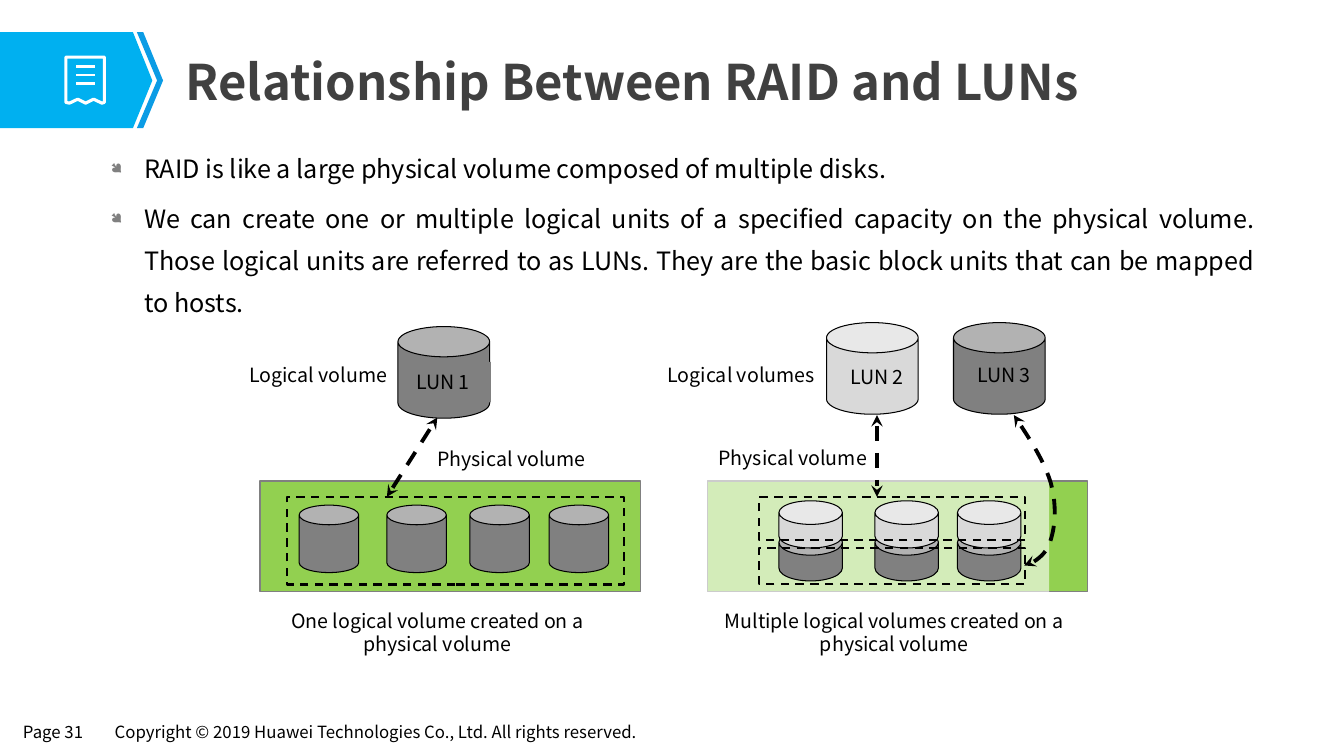
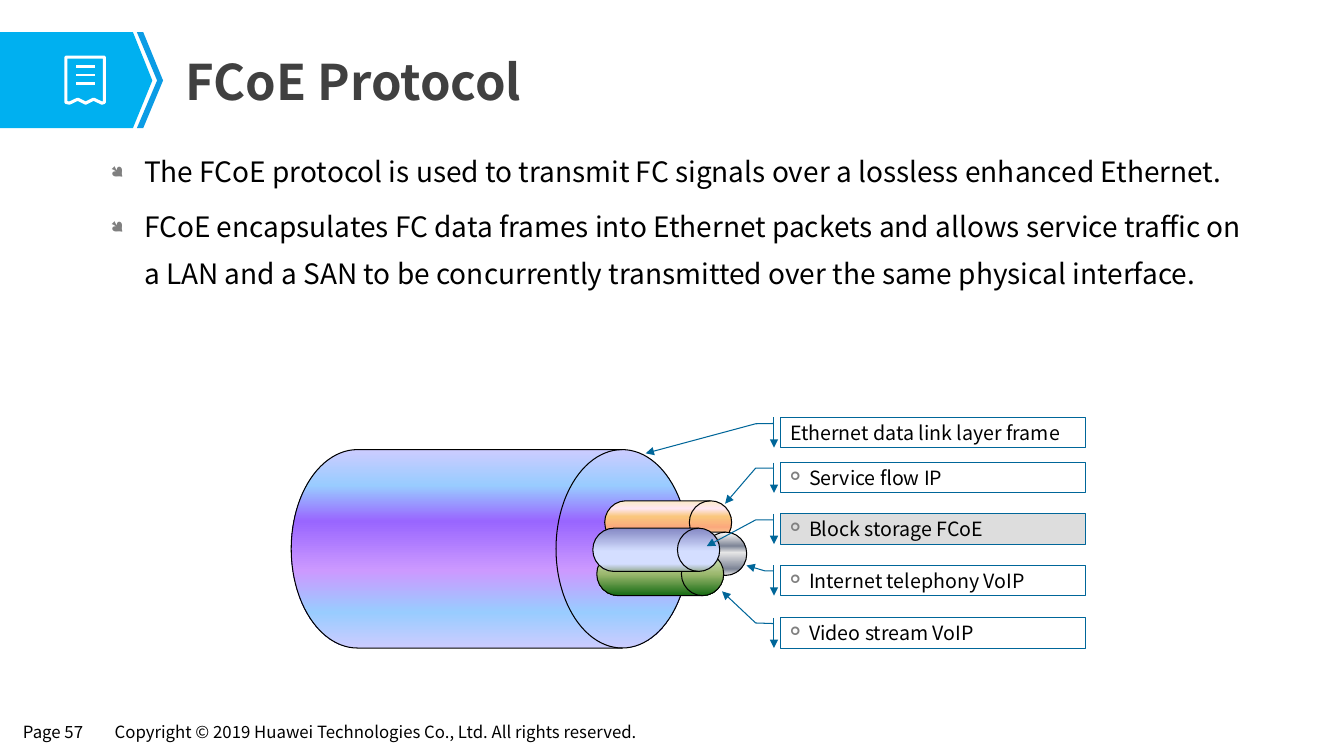
from lxml import etree
from pptx import Presentation
from pptx.dml.color import RGBColor
from pptx.enum.dml import MSO_LINE
from pptx.enum.shapes import MSO_CONNECTOR, MSO_SHAPE
from pptx.enum.text import MSO_ANCHOR, MSO_AUTO_SIZE, PP_ALIGN
from pptx.oxml.ns import qn
from pptx.util import Cm, Pt

RECTANGLE, CAN = MSO_SHAPE.RECTANGLE, MSO_SHAPE.CAN
DRUM = MSO_SHAPE.FLOWCHART_DIRECT_ACCESS_STORAGE
CALLOUT = MSO_SHAPE.LINE_CALLOUT_2_BORDER_AND_ACCENT_BAR
STRAIGHT = MSO_CONNECTOR.STRAIGHT
DASH = MSO_LINE.DASH
TOP, MIDDLE = MSO_ANCHOR.TOP, MSO_ANCHOR.MIDDLE
LEFT, CENTER, JUSTIFY = PP_ALIGN.LEFT, PP_ALIGN.CENTER, PP_ALIGN.JUSTIFY
NO_AUTOFIT = MSO_AUTO_SIZE.NONE

FONT = "Noto Sans CJK SC"
BLACK = RGBColor(0x00, 0x00, 0x00)
WHITE = RGBColor(0xFF, 0xFF, 0xFF)
TITLE_GRAY = RGBColor(0x40, 0x40, 0x40)
GRAY = RGBColor(0x80, 0x80, 0x80)
LIGHT_GRAY = RGBColor(0xD9, 0xD9, 0xD9)
HIGHLIGHT = RGBColor(0xDD, 0xDD, 0xDD)
GREEN = RGBColor(0x92, 0xD0, 0x50)
SKY = RGBColor(0x00, 0xB0, 0xF0)
BLUE = RGBColor(0x0B, 0x9C, 0xE5)
TEAL = RGBColor(0x00, 0x66, 0x99)

# All positions and sizes are in centimetres.
COPYRIGHT = "Copyright © 2019 Huawei Technologies Co., Ltd. All rights reserved."
BANNER = [(3.35, 3.23), (0, 3.23), (0, 0.81), (3.35, 0.81), (3.84, 2.03)]
CHEVRON = [(3.61, 0.81), (3.45, 0.81), (3.96, 2.03), (3.45, 3.23),
           (3.61, 3.23), (4.11, 2.03)]
RECEIPT = [(1.66, 1.44), (2.63, 1.44), (2.63, 2.58), (2.57, 2.6), (2.36, 2.5),
           (2.16, 2.6), (1.96, 2.5), (1.75, 2.6), (1.66, 2.58)]

RAID_TITLE = "Relationship Between RAID and LUNs"
RAID_POINTS = [
    "RAID is like a large physical volume composed of multiple disks.",
    "We can create one or multiple logical units of a specified capacity on the "
    "physical volume. Those logical units are referred to as LUNs. They are the "
    "basic block units that can be mapped to hosts.",
]
RAID_LABELS = [  # text, box, wraps
    ("Physical volume", (10.72, 11.13, 4.34, 0.86), False),
    ("Physical volume", (17.81, 11.1, 4.34, 0.86), False),
    ("Logical volume", (5.97, 9.02, 4.11, 0.86), False),
    ("Logical volumes", (16.51, 9.02, 4.34, 0.86), False),
    ("One logical volume created on a physical volume", (6.15, 15.21, 9.75, 1.45), True),
    ("Multiple logical volumes created on a physical volume",
     (17.53, 15.21, 10.01, 1.45), True),
]
LUNS = [  # name, can position, can colour, label box, label fill, alignment
    ("LUN 1", (10.03, 8.23), GRAY, (10.24, 9.12, 2.13, 1.02), GRAY, LEFT),
    ("LUN 2", (20.83, 8.13), LIGHT_GRAY, (21.11, 9.07, 1.98, 0.86), None, CENTER),
    ("LUN 3", (24.03, 8.13), GRAY, (24.31, 9.02, 1.98, 0.86), None, CENTER),
]
DISK_LEFTS = [7.54, 9.75, 11.84, 13.84]
SPLIT_DISK_LEFTS = [19.63, 22.05, 24.13]
DISK_GROUPS = [(19.13, 12.52, 6.71, 1.09), (19.13, 13.82, 6.71, 0.89),
               (7.24, 12.52, 8.48, 2.21)]
VOLUME_ARROWS = [((9.75, 12.52), (11.02, 10.52)), ((22.1, 10.46), (22.1, 12.52))]
CURVE = [  # cubic segments, each starting where the one before ends
    [(25.81, 14.25), (25.93, 14.25), (26.31, 14.05), (26.44, 13.72)],
    [(26.44, 13.72), (26.57, 13.39), (26.64, 12.9), (26.52, 12.32)],
    [(26.52, 12.32), (26.39, 11.73), (25.98, 11.1), (25.55, 10.46)],
]

FCOE_TITLE = "FCoE Protocol"
FCOE_POINTS = [
    "The FCoE protocol is used to transmit FC signals over a lossless enhanced Ethernet.",
    "FCoE encapsulates FC data frames into Ethernet packets and allows service "
    "traffic on a LAN and a SAN to be concurrently transmitted over the same "
    "physical interface.",
]
STREAM_SIZE = (3.2, 1.09)
DRUMS = [  # box, gradient stops
    ((7.34, 11.33, 10.01, 5),
     [(0, "CCCCFF"), (18, "99CCFF"), (36, "9966FF"), (61, "CC99FF"),
      (82, "99CCFF"), (100, "CCCCFF")]),
    ((15.24, 12.62, *STREAM_SIZE),
     [(0, "FBEAC7"), (18, "FEE7F2"), (36, "FAC77D"), (61, "FBA97D"),
      (82, "FBD49C"), (100, "FEE7F2")]),
    ((15.62, 13.41, *STREAM_SIZE),
     [(0, "FFFFFF"), (7, "E6E6E6"), (32, "7D8496"), (47, "E6E6E6"),
      (85, "7D8496"), (100, "E6E6E6")]),
    ((15.04, 13.92, *STREAM_SIZE), [(0, "DDEBCF"), (50, "9CB86E"), (100, "156B13")]),
    ((14.94, 13.31, *STREAM_SIZE),
     [(0, "8488C4"), (53, "D4DEFF"), (83, "D4DEFF"), (100, "96AB94")]),
]
CALLOUTS = [  # text, top, fill, bullet, pointer adjustments
    ("Ethernet data link layer frame", 10.52, WHITE, None,
     (0.2, -0.02, 0.21, -0.08, 1.19, -0.44)),
    ("Service flow IP", 11.66, WHITE, "➢", (0.18, -0.02, 0.18, -0.08, 1.36, -0.18)),
    ("Block storage FCoE", 12.95, HIGHLIGHT, "➢", (0.2, -0.02, 0.2, -0.08, 1.07, -0.24)),
    ("Internet telephony VoIP", 14.25, WHITE, "➢", (0.18, -0.02, 0.18, -0.05, 0, -0.11)),
    ("Video stream VoIP", 15.57, WHITE, "➢", (0.19, -0.02, 0.17, -0.08, -0.88, -0.19)),
]


def add_child(parent, tag, **attributes):
    child = etree.SubElement(parent, qn(tag))
    for name, value in attributes.items():
        child.set(name, str(value))
    return child


def add_bullet(paragraph, symbol, indent):
    properties = paragraph._p.get_or_add_pPr()
    properties.set("marL", str(Cm(indent)))
    properties.set("indent", str(-Cm(indent)))
    add_child(add_child(properties, "a:buClr"), "a:srgbClr", val=GRAY)
    add_child(properties, "a:buSzPct", val=60000)
    add_child(properties, "a:buFont", typeface="Wingdings")
    add_child(properties, "a:buChar", char=symbol)


def write_text(shape, *texts, size=14, color=BLACK, bold=False, align=LEFT,
               anchor=TOP, wrap=True, bullet=None, indent=0, spacing=None, gap=0):
    """Fill a shape with one paragraph per text, all in the same format."""
    frame = shape.text_frame
    frame.auto_size = NO_AUTOFIT
    frame.word_wrap = wrap
    frame.vertical_anchor = anchor
    for index, text in enumerate(texts):
        paragraph = frame.add_paragraph() if index else frame.paragraphs[0]
        if bullet:
            add_bullet(paragraph, bullet, indent)
        paragraph.alignment = align
        if spacing:
            paragraph.line_spacing = spacing
        if index and gap:
            paragraph.space_before = Pt(gap)
        run = paragraph.add_run()
        run.text = text
        run.font.name = FONT
        run.font.size = Pt(size)
        run.font.bold = bold
        run.font.color.rgb = color


def add_label(slide, text, box, **text_format):
    shape = slide.shapes.add_textbox(*map(Cm, box))
    write_text(shape, text, **text_format)


def style_line(line, color, width, dash=None):
    line.color.rgb = color
    line.width = Pt(width)
    if dash:
        line.dash_style = dash


def style_shape(shape, fill=None, line=None, width=0.75, dash=None):
    shape.shadow.inherit = False
    if fill is None:
        shape.fill.background()
    else:
        shape.fill.solid()
        shape.fill.fore_color.rgb = fill
    if line is None:
        shape.line.fill.background()
    else:
        style_line(shape.line, line, width, dash)


def add_preset(slide, kind, box, adjustments=(), **style):
    shape = slide.shapes.add_shape(kind, *map(Cm, box))
    for index, value in enumerate(adjustments):
        shape.adjustments[index] = value
    style_shape(shape, **style)
    return shape


def add_outline(slide, points, close=True, **style):
    (left, top), *others = [(Cm(x), Cm(y)) for x, y in points]
    builder = slide.shapes.build_freeform(left, top)
    builder.add_line_segments(others, close=close)
    shape = builder.convert_to_shape()
    style_shape(shape, **style)
    return shape


def add_line(slide, start, end, color, width, dash=None):
    connector = slide.shapes.add_connector(STRAIGHT, *map(Cm, start + end))
    style_line(connector.line, color, width, dash)
    add_child(connector._element.spPr, "a:effectLst")
    return connector


def add_arrowheads(shape, head=None, tail=None):
    line = shape._element.spPr.find(qn("a:ln"))
    for tag, kind in (("a:headEnd", head), ("a:tailEnd", tail)):
        if kind:
            add_child(line, tag, type=kind)


def set_alpha(shape, percent):
    color = shape._element.spPr.find(qn("a:solidFill"))[0]
    add_child(color, "a:alpha", val=percent * 1000)


def set_vertical_gradient(shape, stops):
    shape.fill.gradient()
    gradient = shape._element.spPr.find(qn("a:gradFill"))
    for child in list(gradient):
        gradient.remove(child)
    stop_list = add_child(gradient, "a:gsLst")
    for position, color in stops:
        stop = add_child(stop_list, "a:gs", pos=position * 1000)
        add_child(stop, "a:srgbClr", val=color)
    add_child(gradient, "a:lin", ang=5400000, scaled=1)


def sample_curve(segments, steps=12):
    """Return points along joined cubic Bézier segments."""
    points = [segments[0][0]]
    for segment in segments:
        for step in range(1, steps + 1):
            t = step / steps
            weights = ((1 - t) ** 3, 3 * t * (1 - t) ** 2, 3 * t * t * (1 - t), t ** 3)
            points.append(tuple(sum(w * p[axis] for w, p in zip(weights, segment))
                                for axis in (0, 1)))
    return points


def add_content_slide(presentation, page, title, points, size, align):
    """Add a slide with the shared banner, title, bullets and footer."""
    slide = presentation.slides.add_slide(presentation.slide_layouts[5])
    add_label(slide, f"Page {page}", (0.33, 18.06, 2.13, 0.74), size=12, wrap=False)
    add_label(slide, COPYRIGHT, (2.64, 18.06, 14.38, 0.74), size=12, wrap=False)
    add_outline(slide, BANNER, fill=SKY)
    add_outline(slide, CHEVRON, fill=BLUE)
    add_outline(slide, RECEIPT, line=WHITE, width=2.25)
    for row in range(3):
        y = 1.68 + 0.21 * row
        add_line(slide, (1.92, y), (2.4, y), WHITE, 1.75)

    heading = slide.shapes.title
    heading.left, heading.top, heading.width, heading.height = map(
        Cm, (4.42, 1.14, 27.31, 1.78))
    write_text(heading, title, size=35, color=TITLE_GRAY, bold=True, anchor=MIDDLE)
    body = slide.shapes.add_textbox(*map(Cm, (2.54, 3.43, 29.34, 13)))
    write_text(body, *points, size=size, align=align, bullet="●", indent=0.84,
               spacing=1.4, gap=0.3 * size)
    return slide


def build_raid_slide(presentation):
    slide = add_content_slide(presentation, 31, RAID_TITLE, RAID_POINTS, 18, JUSTIFY)
    add_preset(slide, RECTANGLE, (17.83, 12.12, 9.58, 2.79), fill=GREEN, line=GRAY, width=1)
    veil = add_preset(slide, RECTANGLE, (7.24, 8.23, 19.2, 8.03), fill=WHITE)
    set_alpha(veil, 60)
    add_preset(slide, RECTANGLE, (6.55, 12.12, 9.6, 2.79), fill=GREEN, line=GRAY, width=1)

    arrows = [add_line(slide, start, end, BLACK, 2.75, DASH) for start, end in VOLUME_ARROWS]
    arrows.append(add_outline(slide, sample_curve(CURVE), close=False,
                              line=BLACK, width=2.75, dash=DASH))
    for arrow in arrows:
        add_arrowheads(arrow, head="stealth", tail="stealth")
    for text, box, wrap in RAID_LABELS:
        add_label(slide, text, box, align=CENTER, wrap=wrap)

    for left in DISK_LEFTS:
        add_preset(slide, CAN, (left, 12.73, 1.5, 1.7), [0.33], fill=GRAY, line=BLACK)
    for name, position, color, label_box, label_fill, align in LUNS:
        add_preset(slide, CAN, (*position, 2.31, 2.31), [0.33], fill=color, line=BLACK)
        label = add_preset(slide, RECTANGLE, label_box, fill=label_fill)
        write_text(label, name, align=align, anchor=MIDDLE, wrap=False)
    for left in SPLIT_DISK_LEFTS:
        for top, height, color in ((13.34, 1.3, GRAY), (12.62, 1.19, LIGHT_GRAY)):
            add_preset(slide, CAN, (left, top, 1.6, height), [0.5], fill=color, line=BLACK)
    for box in DISK_GROUPS:
        add_preset(slide, RECTANGLE, box, line=BLACK, width=1.5, dash=DASH)


def build_fcoe_slide(presentation):
    slide = add_content_slide(presentation, 57, FCOE_TITLE, FCOE_POINTS, 20, LEFT)
    for box, stops in DRUMS:
        set_vertical_gradient(add_preset(slide, DRUM, box, line=BLACK), stops)
    for text, top, fill, bullet, pointer in CALLOUTS:
        callout = add_preset(slide, CALLOUT, (19.66, top, 7.7, 0.76), pointer,
                             fill=fill, line=TEAL)
        add_arrowheads(callout, tail="triangle")
        write_text(callout, text, anchor=MIDDLE, bullet=bullet, indent=0.48)


def main():
    presentation = Presentation()
    presentation.slide_width, presentation.slide_height = Cm(33.87), Cm(19.05)
    build_raid_slide(presentation)
    build_fcoe_slide(presentation)
    presentation.save("out.pptx")


if __name__ == "__main__":
    main()
